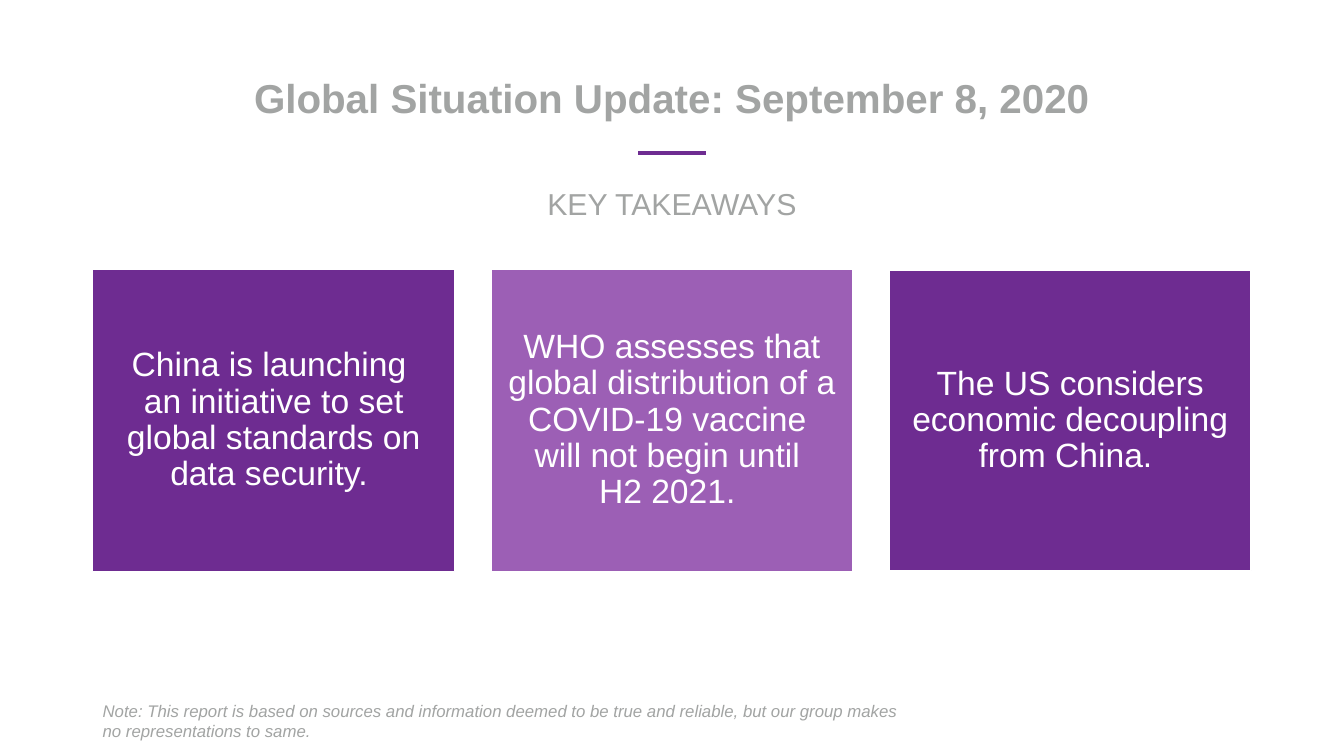
from dataclasses import dataclass

import pptx
import pptx.dml.color
import pptx.enum.shapes
import pptx.enum.text
import pptx.oxml.ns
import pptx.shapes.autoshape
import pptx.slide
import pptx.util
from lxml import etree

PURPLE = pptx.dml.color.RGBColor(0x6E, 0x2C, 0x91)
LILAC = pptx.dml.color.RGBColor(0x9C, 0x5F, 0xB5)
GREY = pptx.dml.color.RGBColor(0xA2, 0xA4, 0xA3)
WHITE = pptx.dml.color.RGBColor(0xFF, 0xFF, 0xFF)

WIDTH = pptx.util.Inches(13.33)
HEIGHT = pptx.util.Inches(7.5)

# Places and sizes are percentages of the slide's width and height.
MARGIN = 6.9
CARD_WIDTH = 26.93
CARD_PITCH = 29.63
CARD_MIDDLE = 55.6

CENTER = pptx.enum.text.PP_ALIGN.CENTER
LEFT = pptx.enum.text.PP_ALIGN.LEFT


@dataclass(frozen=True)
class Box:
    left: float
    top: float
    width: float
    height: float

    def emu(self) -> tuple[int, int, int, int]:
        return (across(self.left), down(self.top),
                across(self.width), down(self.height))


@dataclass(frozen=True)
class Line:
    """One paragraph; a vertical tab in the text is a line break."""
    text: str
    font: dict
    align: int = CENTER
    spacing: float = 0.9
    before: float = 0


@dataclass(frozen=True)
class Card:
    text: str
    fill: pptx.dml.color.RGBColor
    height: float = 40


TITLE_FONT = {"size": 28.8, "color": GREY, "bold": True}
SUBTITLE_FONT = {"size": 21.6, "color": GREY}
CARD_FONT = {"size": 24, "color": WHITE}
NOTE_FONT = {"size": 12, "color": GREY, "italic": True}

HEADING = [
    Line("Global Situation Update: September 8, 2020", TITLE_FONT),
    Line("KEY TAKEAWAYS", SUBTITLE_FONT, before=48),
]
CARDS = [
    Card("China is launching \van initiative to set global standards on "
         "data security. ", PURPLE),
    Card("WHO assesses that global distribution of a COVID-19 vaccine "
         "\vwill not begin until \vH2 2021. ", LILAC),
    Card("The US considers economic decoupling from China. ", PURPLE, 39.73),
]
NOTE = Line("Note: This report is based on sources and information deemed to "
            "be true and reliable, but our group makes no representations to "
            "same.", NOTE_FONT, LEFT, 1.0)


def across(share: float) -> int:
    return round(WIDTH * share / 100)


def down(share: float) -> int:
    return round(HEIGHT * share / 100)


def write(sp: pptx.shapes.autoshape.Shape, lines: list[Line]) -> None:
    tf = sp.text_frame
    tf.word_wrap = True
    tf.vertical_anchor = pptx.enum.text.MSO_ANCHOR.MIDDLE
    for i, line in enumerate(lines):
        p = tf.add_paragraph() if i else tf.paragraphs[0]
        p.text = line.text
        p.alignment = line.align
        p.line_spacing = line.spacing
        if line.before:
            p.space_before = pptx.util.Pt(line.before)
        for r in p.runs:
            r.font.name = "Arial"
            for name, value in line.font.items():
                if name == "color":
                    r.font.color.rgb = value
                else:
                    setattr(r.font, name,
                            pptx.util.Pt(value) if name == "size" else value)


def add_text(s: pptx.slide.Slide, box: Box, lines: list[Line]) -> None:
    write(s.shapes.add_textbox(*box.emu()), lines)


def add_card(s: pptx.slide.Slide, column: int, card: Card) -> None:
    box = Box(MARGIN + column * CARD_PITCH, CARD_MIDDLE - card.height / 2,
              CARD_WIDTH, card.height)
    sp = s.shapes.add_shape(pptx.enum.shapes.MSO_SHAPE.RECTANGLE, *box.emu())
    sp.shadow.inherit = False
    sp.fill.solid()
    sp.fill.fore_color.rgb = card.fill
    sp.line.color.rgb = WHITE
    sp.line.width = pptx.util.Pt(1)
    for side in ("left", "top", "right", "bottom"):
        setattr(sp.text_frame, f"margin_{side}", pptx.util.Inches(0.1))
    write(sp, [Line(card.text, CARD_FONT)])


def add_rule(s: pptx.slide.Slide, left: float, right: float, y: float) -> None:
    rule = s.shapes.add_connector(
        pptx.enum.shapes.MSO_CONNECTOR.STRAIGHT,
        across(left), down(y), across(right), down(y))
    rule.line.color.rgb = PURPLE
    rule.line.width = pptx.util.Pt(3)
    etree.SubElement(rule._element.spPr, pptx.oxml.ns.qn("a:effectLst"))


def main() -> None:
    prs = pptx.Presentation()
    prs.slide_width, prs.slide_height = WIDTH, HEIGHT
    s = prs.slides.add_slide(prs.slide_layouts[6])
    add_text(s, Box(MARGIN, 10.27, 100 - 2 * MARGIN, 19.33), HEADING)
    for column, card in enumerate(CARDS):
        add_card(s, column, card)
    add_rule(s, 47.5, 52.5, 20.27)
    add_text(s, Box(MARGIN, 92.67, 61.6, 5.33), [NOTE])
    prs.save("out.pptx")


if __name__ == "__main__":
    main()
